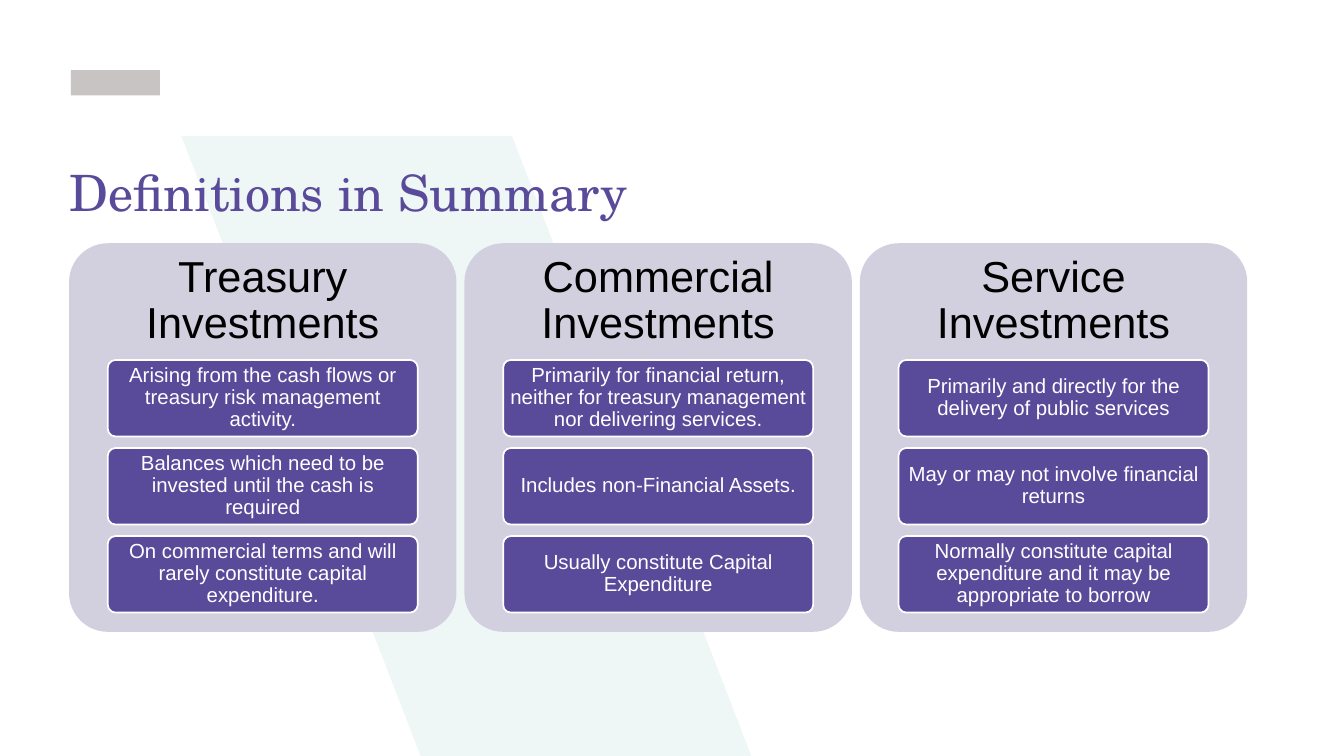
from pptx import Presentation
from pptx.dml.color import RGBColor
from pptx.enum.shapes import MSO_SHAPE
from pptx.enum.text import MSO_ANCHOR, PP_ALIGN
from pptx.util import Cm, Pt

RECT = MSO_SHAPE.RECTANGLE
ROUNDED = MSO_SHAPE.ROUNDED_RECTANGLE
TOP, MIDDLE = MSO_ANCHOR.TOP, MSO_ANCHOR.MIDDLE
LEFT, CENTER = PP_ALIGN.LEFT, PP_ALIGN.CENTER

COLORS = {
    "purple": "5A4B9A",
    "panel": "D2D0DE",
    "band": "EEF7F5",
    "grey": "C7C4C3",
    "white": "FFFFFF",
    "black": "000000",
}
SANS, SERIF = "Arial", "TeX Gyre Schola"

# Lengths in centimetres
SLIDE_W, SLIDE_H = 55.85, 31.42
MARGIN = 2.87
PANEL_TOP, PANEL_W, PANEL_H, PANEL_STEP = 10.11, 16.1, 16.15, 16.43
HEADING_H = 4.85
CARD_INDENT, CARD_W, CARD_H, CARD_STEP = 1.61, 12.88, 3.18, 3.66
BAND = [(21.28, 5.66), (7.54, 5.66), (17.48, SLIDE_H), (31.22, SLIDE_H)]

INVESTMENTS = [
    ("Treasury Investments", [
        "Arising from the cash flows or treasury risk management activity.",
        "Balances which need to be invested until the cash is required",
        "On commercial terms and will rarely constitute capital expenditure.",
    ]),
    ("Commercial Investments", [
        "Primarily for financial return, neither for treasury management "
        "nor delivering services.",
        "Includes non-Financial Assets.",
        "Usually constitute Capital Expenditure",
    ]),
    ("Service Investments", [
        "Primarily and directly for the delivery of public services",
        "May or may not involve financial returns",
        "Normally constitute capital expenditure and it may be "
        "appropriate to borrow",
    ]),
]


def rgb(name):
    return RGBColor.from_string(COLORS[name])


def paint(sp, fill, line=None):
    sp.shadow.inherit = False
    sp.fill.solid()
    sp.fill.fore_color.rgb = rgb(fill)
    if line:
        sp.line.color.rgb = rgb(line)
        sp.line.width = Pt(2)
    else:
        sp.line.fill.background()


def add_box(s, kind, x, y, w, h, fill, line=None):
    sp = s.shapes.add_shape(kind, Cm(x), Cm(y), Cm(w), Cm(h))
    if kind == ROUNDED:
        sp.adjustments[0] = 0.1
    paint(sp, fill, line)
    return sp


def write(sp, text, size, color, font=SANS, align=CENTER, anchor=MIDDLE,
          inset=(0, 0), spacing=0.9):
    """Fill a shape with one paragraph; inset is (sides, top and bottom)."""
    tf = sp.text_frame
    tf.word_wrap = True
    tf.vertical_anchor = anchor
    tf.margin_left = tf.margin_right = Cm(inset[0])
    tf.margin_top = tf.margin_bottom = Cm(inset[1])
    p = tf.paragraphs[0]
    p.alignment = align
    p.line_spacing = spacing
    r = p.add_run()
    r.text = text
    r.font.name = font
    r.font.size = Pt(size)
    r.font.color.rgb = rgb(color)


def add_text(s, x, y, w, h, text, size, color, **style):
    sp = s.shapes.add_textbox(Cm(x), Cm(y), Cm(w), Cm(h))
    write(sp, text, size, color, **style)


def add_band(s):
    points = [(Cm(x), Cm(y)) for x, y in BAND]
    builder = s.shapes.build_freeform(*points[0])
    builder.add_line_segments(points[1:], close=True)
    paint(builder.convert_to_shape(), "band")


def add_panel(s, x, heading, cards):
    add_box(s, ROUNDED, x, PANEL_TOP, PANEL_W, PANEL_H, "panel")
    add_text(s, x, PANEL_TOP, PANEL_W, HEADING_H, heading, 51, "black",
             inset=(0.53, 0.53))
    for row, text in enumerate(cards):
        y = PANEL_TOP + HEADING_H + row * CARD_STEP
        card = add_box(s, ROUNDED, x + CARD_INDENT, y, CARD_W, CARD_H,
                       "purple", "white")
        write(card, text, 24, "white", inset=(0.18, 0.13))


def main():
    prs = Presentation()
    prs.slide_width, prs.slide_height = Cm(SLIDE_W), Cm(SLIDE_H)
    s = prs.slides.add_slide(prs.slide_layouts[6])
    add_box(s, RECT, 2.95, 2.92, 3.7, 1.05, "grey")
    add_band(s)
    add_text(s, MARGIN, 6.73, 28.45, 2.59, "Definitions in Summary", 59,
             "purple", font=SERIF, align=LEFT, anchor=TOP, spacing=1.0)
    for col, (heading, cards) in enumerate(INVESTMENTS):
        add_panel(s, MARGIN + col * PANEL_STEP, heading, cards)
    prs.save("out.pptx")


if __name__ == "__main__":
    main()
